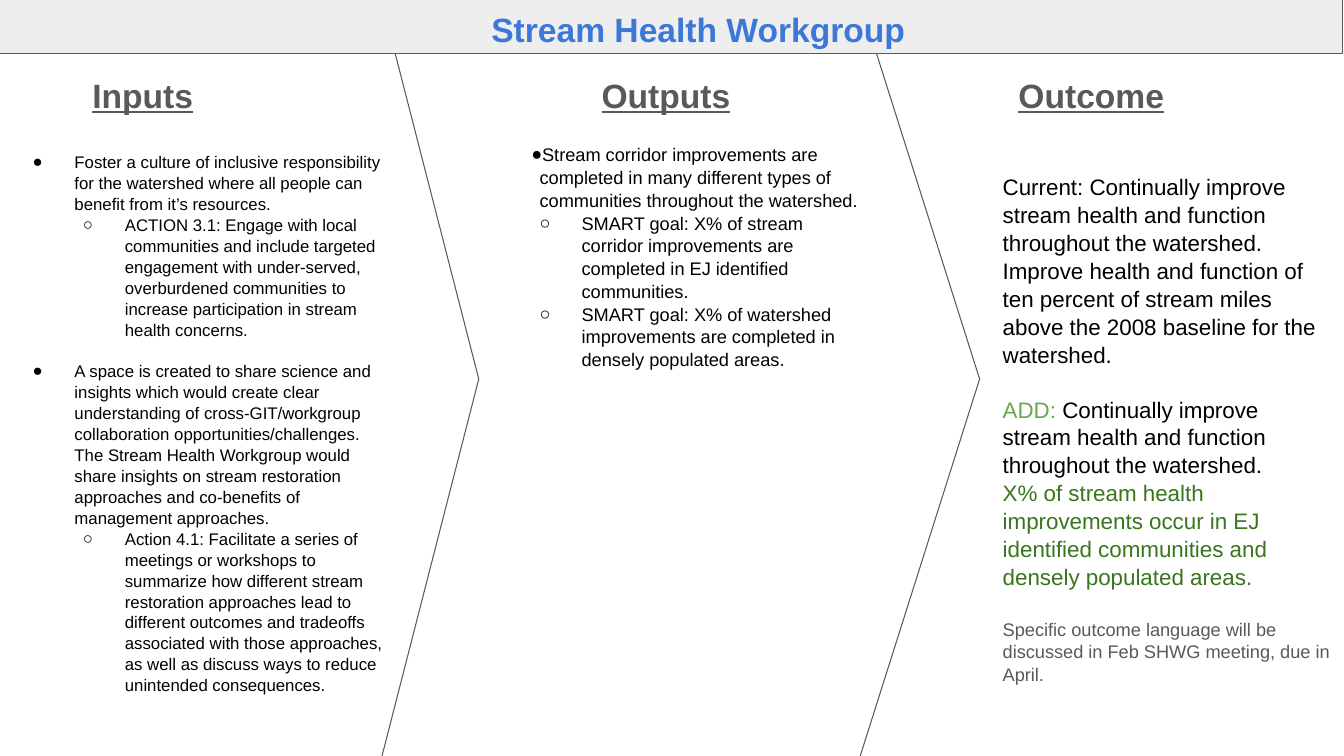
from lxml.etree import SubElement
from pptx import Presentation
from pptx.dml.color import RGBColor
from pptx.enum.shapes import MSO_SHAPE as Shape
from pptx.enum.text import PP_ALIGN as Align
from pptx.oxml.ns import qn
from pptx.util import Pt

SCALE = 9525
BLACK, GRAY, BLUE = "000000", "595959", "3C78D8"
LIME, GREEN = "6AA84F", "38761D"


def px(n):
    return n * SCALE


def color(code):
    return RGBColor.from_string(code)


class Board:
    font = "Arial"
    inset = 13
    hang = 40
    lead = 1.04

    def __init__(self, deck):
        self.slide = deck.slides.add_slide(deck.slide_layouts[6])

    def shape(self, kind, box, fill, turn=0):
        item = self.slide.shapes.add_shape(kind, *map(px, box))
        item.shadow.inherit = False
        item.rotation = turn
        item.fill.solid()
        item.fill.fore_color.rgb = color(fill)
        item.line.color.rgb = color(GRAY)
        item.line.width = Pt(0.75)

    def frame(self, box):
        frame = self.slide.shapes.add_textbox(*map(px, box)).text_frame
        frame.word_wrap = True
        frame.margin_left = frame.margin_right = px(self.inset)
        frame.margin_top = frame.margin_bottom = px(self.inset)
        return frame

    def run(self, para, text, size, ink, bold=False, under=False):
        run = para.add_run()
        run.text = text
        font = run.font
        font.name, font.size = self.font, Pt(size)
        font.bold, font.underline = bold, under
        font.color.rgb = color(ink)

    def title(self, box, text, ink, align=Align.LEFT, under=False):
        para = self.frame(box).paragraphs[0]
        para.alignment = align
        self.run(para, text, 24, ink, True, under)

    def paras(self, box, rows):
        frame = self.frame(box)
        for i, (gap, runs) in enumerate(rows):
            para = frame.add_paragraph() if i else frame.paragraphs[0]
            para.line_spacing = self.lead
            para.space_before = Pt(gap)
            for text, size, ink in runs:
                self.run(para, text, size, ink)
            yield para

    def prose(self, box, rows):
        list(self.paras(box, rows))

    def bullets(self, box, size, left, rows):
        lines = [(gap, [(text, size, BLACK)]) for level, gap, text in rows]
        for para, (level, gap, text) in zip(self.paras(box, lines), rows):
            para.level = level
            props = para._p.get_or_add_pPr()
            props.set("marL", str(px(left[level])))
            props.set("indent", str(px(-self.hang)))
            tint = SubElement(props, qn("a:buClr"))
            SubElement(tint, qn("a:srgbClr"), val=BLACK)
            SubElement(props, qn("a:buFont"), typeface=self.font)
            SubElement(props, qn("a:buChar"), char="●○"[level])


def main():
    deck = Presentation()
    deck.slide_width, deck.slide_height = px(1280), px(720)
    board = Board(deck)

    for box in ((288, 76, 720, 570), (-135, 130, 720, 462)):
        board.shape(Shape.FLOWCHART_OFFPAGE_CONNECTOR, box, "FFFFFF", 270)
    for left, head in ((75, "Inputs"), (560, "Outputs"), (957, "Outcome")):
        board.title((left, 58, 293, 72), head, GRAY, under=True)

    board.bullets((-6, 131, 388, 579), 12, (64, 112), [
        (0, 0, "Foster a culture of inclusive responsibility for the watershed "
               "where all people can benefit from it’s resources."),
        (1, 0, "ACTION 3.1: Engage with local communities and include targeted "
               "engagement with under-served, overburdened communities to "
               "increase participation in stream health concerns."),
        (0, 14.4, "A space is created to share science and insights which would "
                  "create clear understanding of cross-GIT/workgroup "
                  "collaboration opportunities/challenges. The Stream Health "
                  "Workgroup would share insights on stream restoration "
                  "approaches and co-benefits of management approaches."),
        (1, 0, "Action 4.1: Facilitate a series of meetings or workshops to "
               "summarize how different stream restoration approaches lead to "
               "different outcomes and tradeoffs associated with those "
               "approaches, as well as discuss ways to reduce unintended "
               "consequences."),
    ])
    board.bullets((493, 123, 340, 543), 13, (8, 48), [
        (0, 0, "Stream corridor improvements are completed in many different "
               "types of communities throughout the watershed."),
        (1, 0, "SMART goal: X% of stream corridor improvements are completed "
               "in EJ identified communities."),
        (1, 0, "SMART goal: X% of watershed improvements are completed in "
               "densely populated areas."),
    ])

    board.shape(Shape.RECTANGLE, (-7, -5, 1286, 56), "EEEEEE")
    board.title((107, -5, 1116, 46), "Stream Health Workgroup", BLUE, Align.CENTER)

    aim = "Continually improve stream health and function throughout the watershed."
    board.prose((942, 151, 340, 562), [
        (0, [("Current: " + aim + " Improve health and function of ten percent of "
              "stream miles above the 2008 baseline for the watershed.", 16, BLACK)]),
        (19.2, [("ADD: ", 16, LIME), (aim, 16, BLACK)]),
        (0, [("X% of stream health improvements occur in EJ identified "
              "communities and densely populated areas.", 16, GREEN)]),
        (19.2, [("Specific outcome language will be discussed in Feb SHWG "
                 "meeting, due in April.", 13, GRAY)]),
    ])
    deck.save("out.pptx")


if __name__ == "__main__":
    main()
